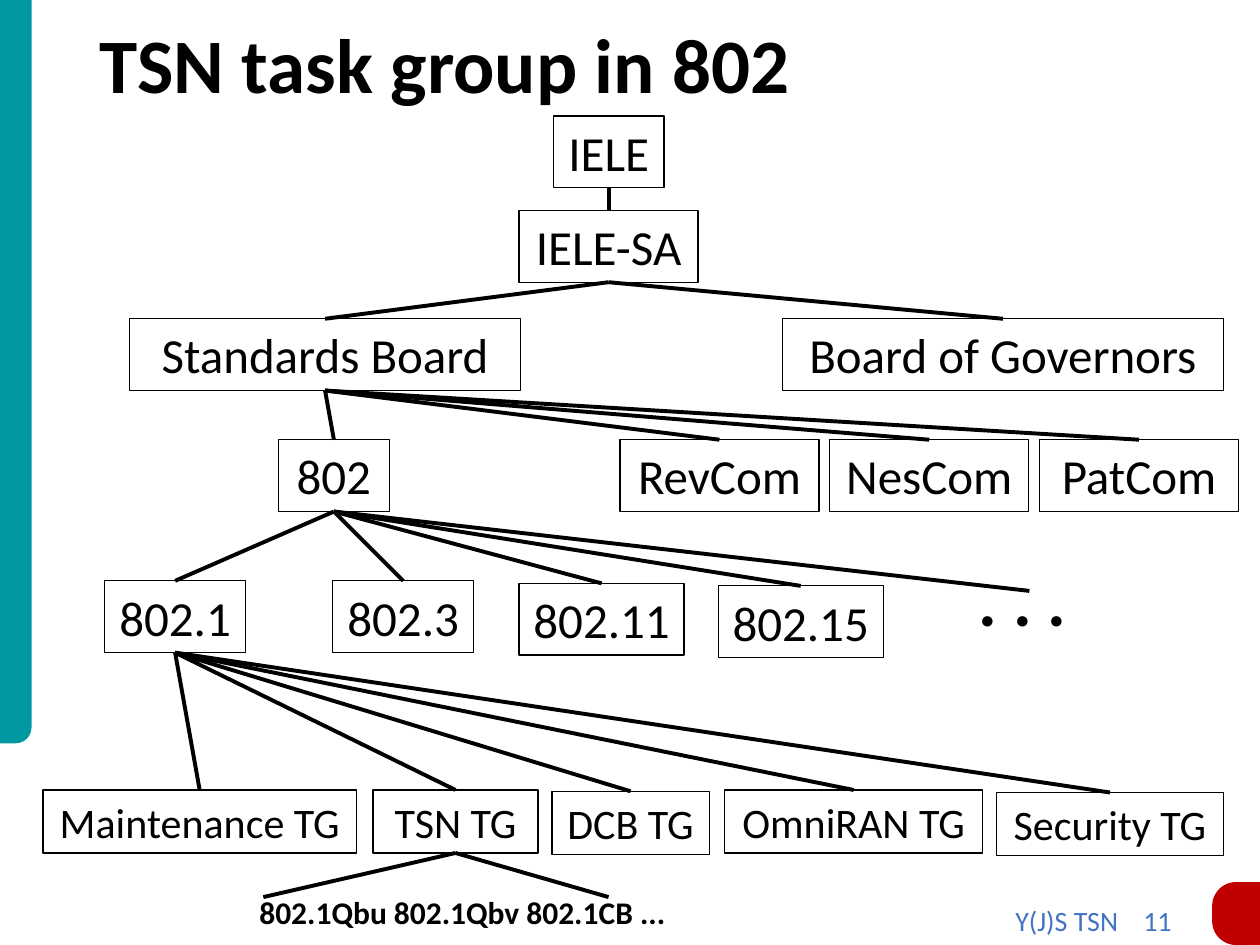
from dataclasses import dataclass

from lxml import etree
from pptx import Presentation
from pptx.dml.color import RGBColor
from pptx.enum.shapes import MSO_CONNECTOR, MSO_SHAPE
from pptx.enum.text import MSO_ANCHOR, MSO_AUTO_SIZE, PP_ALIGN
from pptx.oxml.ns import qn
from pptx.util import Inches, Pt

STRAIGHT = MSO_CONNECTOR.STRAIGHT
RECTANGLE = MSO_SHAPE.RECTANGLE
ONE_ROUND = MSO_SHAPE.ROUND_1_RECTANGLE
TWO_ROUND = MSO_SHAPE.ROUND_2_SAME_RECTANGLE
TOP, MIDDLE = MSO_ANCHOR.TOP, MSO_ANCHOR.MIDDLE
LEFT, CENTER = PP_ALIGN.LEFT, PP_ALIGN.CENTER
GROW = MSO_AUTO_SIZE.SHAPE_TO_FIT_TEXT
TOP_SIDE, BOTTOM_SIDE = 0, 2


@dataclass(frozen=True)
class Theme:
    font: str = "Calibri"
    ink: RGBColor = RGBColor(0x00, 0x00, 0x00)
    teal: RGBColor = RGBColor(0x00, 0x98, 0xA1)
    red: RGBColor = RGBColor(0xC0, 0x00, 0x00)
    blue: RGBColor = RGBColor(0x44, 0x72, 0xC4)
    title_size: float = 44
    dots_size: float = 40
    node_size: float = 28
    group_size: float = 24
    project_size: float = 18
    footer_size: float = 16
    border: float = 0.75
    branch: float = 2.25


THEME = Theme()


@dataclass(frozen=True)
class Node:
    """A box of the organisation tree, in inches."""
    name: str
    parent: str
    left: float
    top: float
    width: float
    height: float = 0.57
    size: float = THEME.node_size


@dataclass(frozen=True)
class Label:
    """Free text without a border, in inches."""
    text: str
    left: float
    top: float
    width: float
    height: float
    size: float
    color: RGBColor = THEME.ink
    bold: bool = True
    anchor: MSO_ANCHOR = TOP
    spacing: float = 1.0
    grow: bool = True


@dataclass(frozen=True)
class Branch:
    """A line from a node to a point where no box stands."""
    parent: str
    x: float
    y: float


def group(name: str, left: float, top: float, width: float) -> Node:
    return Node(name, "802.1", left, top, width, 0.5, THEME.group_size)


# Parents come before their children
NODES = [
    Node("IELE", "", 4.39, 0.92, 0.88),
    Node("IELE-SA", "IELE", 4.12, 1.67, 1.42),
    Node("Standards Board", "IELE-SA", 1.03, 2.53, 3.1),
    Node("Board of Governors", "IELE-SA", 6.21, 2.53, 3.5),
    Node("802", "Standards Board", 2.21, 3.49, 0.88),
    *(Node(name, "Standards Board", 4.92 + 1.665 * index, 3.49, 1.58)
      for index, name in enumerate(["RevCom", "NesCom", "PatCom"])),
    Node("802.1", "802", 0.83, 4.61, 1.12),
    Node("802.3", "802", 2.64, 4.61, 1.12),
    Node("802.11", "802", 4.12, 4.63, 1.31),
    Node("802.15", "802", 5.7, 4.65, 1.31),
    group("Maintenance TG", 0.34, 6.27, 2.49),
    group("TSN TG", 2.96, 6.27, 1.31),
    group("DCB TG", 4.38, 6.28, 1.25),
    group("OmniRAN TG", 5.75, 6.27, 2.05),
    group("Security TG", 7.91, 6.29, 1.8),
]

BRANCHES = [
    Branch("802", 8.17, 4.69),
    Branch("TSN TG", 2.09, 7.12),
    Branch("TSN TG", 4.83, 7.12),
]

LABELS = [
    Label("TSN task group in 802", 0.69, 0.12, 8.62, 0.85, THEME.title_size,
          anchor=MIDDLE, spacing=0.9, grow=False),
    Label("Y(J)S TSN    11", 7.96, 7.12, 1.54, 0.34, THEME.footer_size,
          color=THEME.blue, bold=False, grow=False),
    Label(". . .", 7.67, 4.37, 1.17, 0.77, THEME.dots_size),
    Label("802.1Qbu 802.1Qbv 802.1CB ...", 1.96, 7.04, 3.58, 0.4, THEME.project_size),
]


def write_text(shape, text: str, size: float, color: RGBColor, bold: bool, align: PP_ALIGN):
    frame = shape.text_frame
    frame.word_wrap = True
    para = frame.paragraphs[0]
    para.text = text
    para.alignment = align
    para.font.name = THEME.font
    para.font.size = Pt(size)
    para.font.bold = bold
    para.font.color.rgb = color
    return frame


def add_decoration(page, kind: MSO_SHAPE, bounds: tuple, color: RGBColor):
    shape = page.shapes.add_shape(kind, *map(Inches, bounds))
    shape.shadow.inherit = False
    shape.fill.solid()
    shape.fill.fore_color.rgb = color
    shape.line.fill.background()
    shape.adjustments[0] = 0.5
    return shape


def add_node(page, node: Node):
    box = page.shapes.add_shape(RECTANGLE, Inches(node.left), Inches(node.top),
                                Inches(node.width), Inches(node.height))
    box.shadow.inherit = False
    box.fill.background()
    box.line.color.rgb = THEME.ink
    box.line.width = Pt(THEME.border)
    frame = write_text(box, node.name, node.size, THEME.ink, False, CENTER)
    frame.vertical_anchor = TOP
    frame.auto_size = GROW
    return box


def add_label(page, label: Label) -> None:
    box = page.shapes.add_textbox(Inches(label.left), Inches(label.top),
                                  Inches(label.width), Inches(label.height))
    frame = write_text(box, label.text, label.size, label.color, label.bold, LEFT)
    frame.vertical_anchor = label.anchor
    frame.paragraphs[0].line_spacing = label.spacing
    if label.grow:
        frame.auto_size = GROW


def add_branch(page, parent, x: int, y: int):
    line = page.shapes.add_connector(STRAIGHT, x, y, x, y)
    line.begin_connect(parent, BOTTOM_SIDE)
    line.line.color.rgb = THEME.ink
    line.line.width = Pt(THEME.branch)
    etree.SubElement(line._element.spPr, qn("a:effectLst"))
    return line


def main() -> None:
    deck = Presentation()
    deck.slide_width, deck.slide_height = Inches(10), Inches(7.5)
    page = deck.slides.add_slide(deck.slide_layouts[6])

    # Side bar, rounded at its lower right, and corner tab, rounded on its left
    bar = add_decoration(page, ONE_ROUND, (0, 0, 0.25, 5.9), THEME.teal)
    bar._element.spPr.xfrm.set("flipV", "1")
    tab = add_decoration(page, TWO_ROUND, (9.56, 7.06, 0.5, 0.38), THEME.red)
    tab.rotation = 270

    # Tree boxes, each joined to its parent
    boxes = {}
    for node in NODES:
        box = boxes[node.name] = add_node(page, node)
        if node.parent:
            line = add_branch(page, boxes[node.parent], box.left, box.top)
            line.end_connect(box, TOP_SIDE)

    # Branches to the open ends
    for branch in BRANCHES:
        add_branch(page, boxes[branch.parent], Inches(branch.x), Inches(branch.y))

    # Title, footer and free text
    for label in LABELS:
        add_label(page, label)

    deck.save("out.pptx")


if __name__ == "__main__":
    main()
